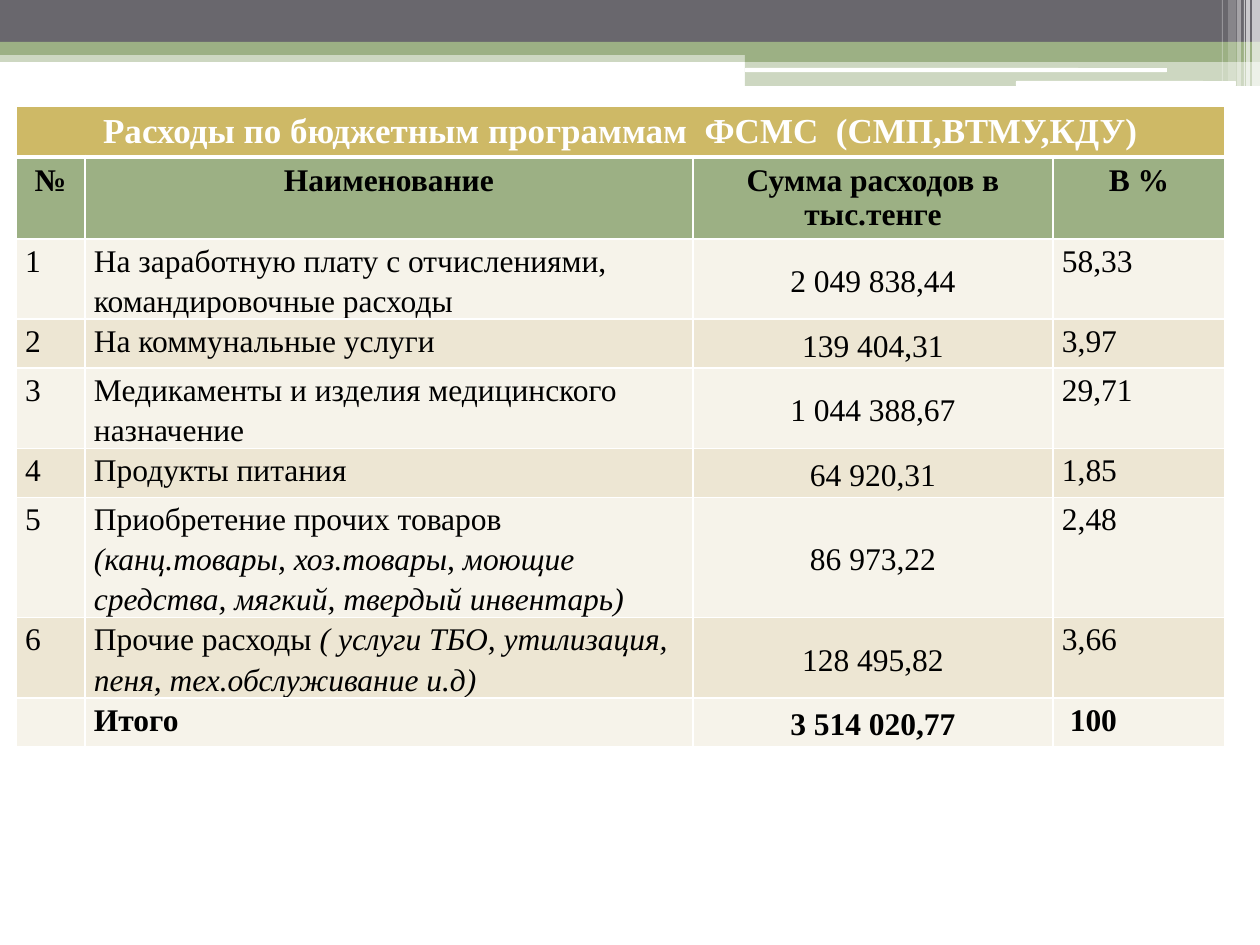
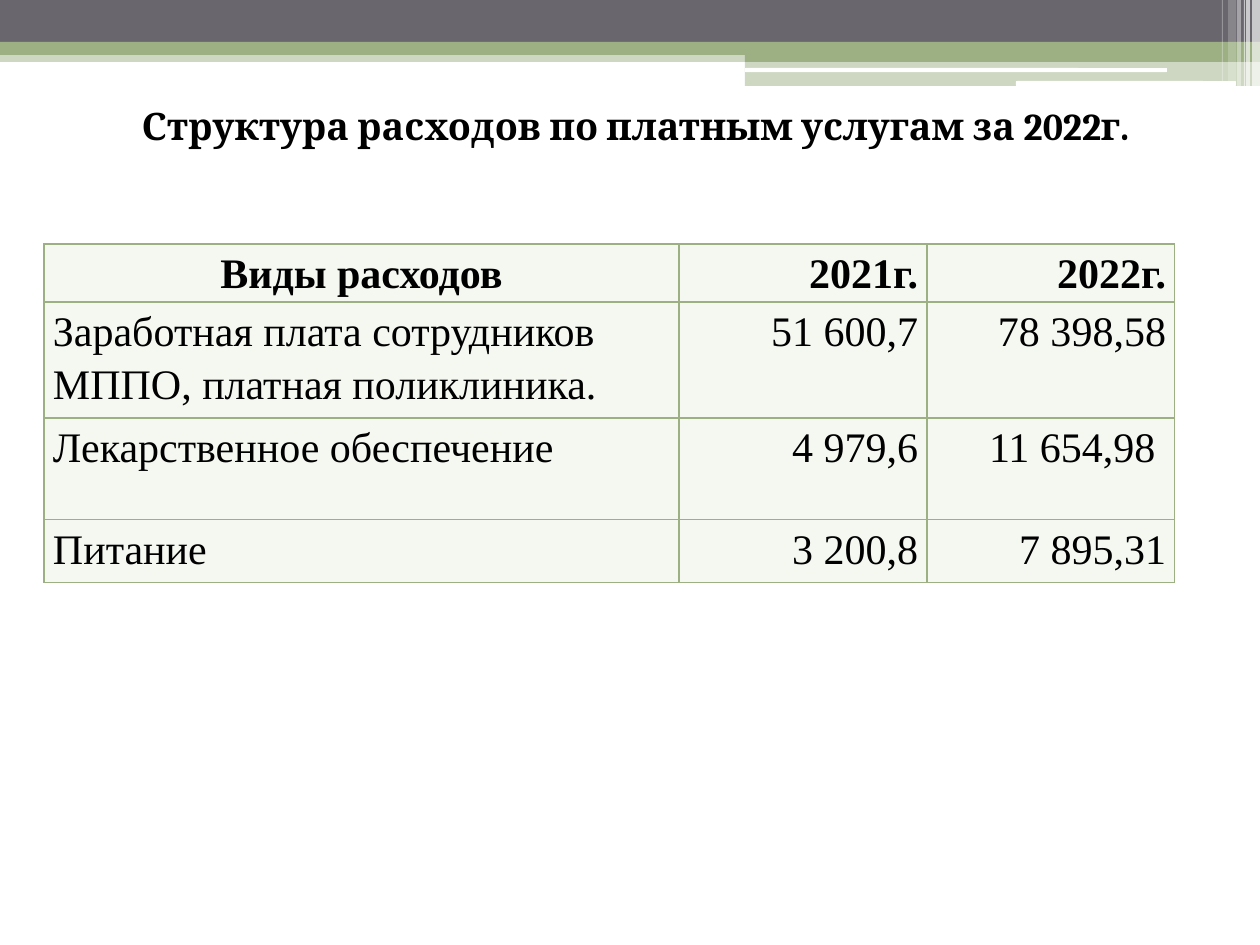
from lxml import etree
from pptx import Presentation
from pptx import util as u
from pptx.dml.color import RGBColor
from pptx.enum import shapes, text
from pptx.oxml.ns import qn

PX = 914400 / 126  # EMU per px
WIDTH, HEIGHT = 1260, 945

WHITE = RGBColor(0xFF, 0xFF, 0xFF)
BLACK = RGBColor(0, 0, 0)
GREY = RGBColor(0x69, 0x67, 0x6D)
GREEN = RGBColor(0x9C, 0xB0, 0x84)
GOLD = RGBColor(0xCE, 0xB9, 0x66)
CREAM = RGBColor(0xF6, 0xF3, 0xEA)
SAND = RGBColor(0xED, 0xE6, 0xD3)
MINT = RGBColor(0xF4, 0xF8, 0xF1)

BODY_FONT, TITLE_FONT = "Times New Roman", "Cambria"
LEFT, CENTER, RIGHT = text.PP_ALIGN.LEFT, text.PP_ALIGN.CENTER, text.PP_ALIGN.RIGHT
RECT = shapes.MSO_SHAPE.RECTANGLE
ROUNDED = shapes.MSO_SHAPE.ROUNDED_RECTANGLE


def px(length):
    return u.Emu(round(length * PX))


class Builder:
    def __init__(self):
        self.deck = Presentation()
        self.deck.slide_width, self.deck.slide_height = px(WIDTH), px(HEIGHT)
        self.page = None

    def new_page(self):
        self.page = self.deck.slides.add_slide(self.deck.slide_layouts[6])
        self.header_bands()

    def bar(self, left, top, width, height, color, opacity=100, kind=RECT):
        box = self.page.shapes.add_shape(kind, px(left), px(top), px(width), px(height))
        box.shadow.inherit = False
        box.fill.solid()
        box.fill.fore_color.rgb = color
        box.line.fill.background()
        if opacity < 100:
            tint = box.fill._xPr.find(".//" + qn("a:srgbClr"))
            etree.SubElement(tint, qn("a:alpha"), val=str(opacity * 1000))

    def header_bands(self):
        # Full-width bands and the stepped right part
        self.bar(0, 50, WIDTH, 12, GREEN, 50)
        self.bar(0, 0, WIDTH, 43, GREY)
        self.bar(0, 42, WIDTH, 13, GREEN)
        self.bar(745, 49, 515, 13, GREEN)
        self.bar(745, 62, 515, 24, GREEN, 50)
        self.bar(745, 68, 422, 4, WHITE, kind=ROUNDED)
        self.bar(1016, 81, 220, 5, WHITE, kind=ROUNDED)
        # Translucent stripes at the right edge
        for left, width, height, opacity in (
            (1252, 8, 86, 65), (1246, 4, 86, 65), (1244, 1, 86, 60),
            (1237, 4, 86, 40), (1228, 8, 81, 20), (1222, 1, 81, 30),
        ):
            self.bar(left, 0, width, height, WHITE, opacity)

    def style(self, para, size, color=BLACK, bold=False, align=LEFT, font=BODY_FONT):
        para.alignment = align
        para.font.name, para.font.size = font, u.Pt(size)
        para.font.bold, para.font.color.rgb = bold, color

    def title(self, left, top, width, height, words):
        box = self.page.shapes.add_textbox(px(left), px(top), px(width), px(height))
        frame = box.text_frame
        frame.word_wrap = True
        frame.vertical_anchor = text.MSO_ANCHOR.MIDDLE
        frame.text = words
        self.style(frame.paragraphs[0], 21.6, bold=True, align=CENTER, font=TITLE_FONT)

    def table(self, left, top, widths, heights, border, weight):
        frame = self.page.shapes.add_table(
            len(heights), len(widths), px(left), px(top), px(sum(widths)), px(sum(heights)))
        table = frame.table
        table.first_row = table.horz_banding = False
        for column, width in zip(table.columns, widths):
            column.width = px(width)
        for row, height in zip(table.rows, heights):
            row.height = px(height)
        for cell in table.iter_cells():
            for side in "LRTB":
                self.border(cell, side, border, weight)
        return table

    def border(self, cell, side, color, weight):
        props = cell._tc.get_or_add_tcPr()
        line = props.find(qn("a:ln" + side))
        if line is None:
            line = etree.SubElement(props, qn("a:ln" + side))
            fill = etree.SubElement(line, qn("a:solidFill"))
            etree.SubElement(fill, qn("a:srgbClr"), val=str(color))
        line.set("w", str(u.Pt(weight)))

    def cell(self, cell, words, fill, size, spacing=1.15, inset=0, middle=False, **look):
        """Words are a string, or a (plain, italic) pair."""
        cell.fill.solid()
        cell.fill.fore_color.rgb = fill
        cell.margin_left = cell.margin_right = px(9)
        cell.margin_top = cell.margin_bottom = px(inset)
        if middle:
            cell.vertical_anchor = text.MSO_ANCHOR.MIDDLE
        para = cell.text_frame.paragraphs[0]
        para.line_spacing = spacing
        self.style(para, size, **look)
        plain, italic = (words, "") if isinstance(words, str) else words
        if plain:
            para.add_run().text = plain.rstrip("\n")
        if plain.endswith("\n"):
            para.add_line_break()
        if italic:
            span = para.add_run()
            span.text = italic
            span.font.italic = True


def budget_page(show):
    show.new_page()
    rows = [
        ("1", "На заработную плату с отчислениями, командировочные расходы",
         "2 049 838,44", "58,33"),
        ("2", "На коммунальные услуги", "139 404,31", "3,97"),
        ("3", "Медикаменты и изделия медицинского назначение", "1 044 388,67", "29,71"),
        ("4", "Продукты питания", "64 920,31", "1,85"),
        ("5", ("Приобретение прочих товаров\n",
               "(канц.товары, хоз.товары, моющие средства, мягкий, твердый инвентарь)"),
         "86 973,22", "2,48"),
        ("6", ("Прочие расходы ", "( услуги ТБО, утилизация, пеня, тех.обслуживание и.д)"),
         "128 495,82", "3,66"),
        ("", "Итого", "3 514 020,77", " 100"),
    ]
    table = show.table(16, 106, [69, 608, 360, 172],
                       [51, 82, 80, 49, 80, 49, 120, 80, 49], WHITE, 1)
    # Heading across all columns, with a thick rule below
    for column in range(4):
        show.border(table.cell(0, column), "B", WHITE, 3)
        show.border(table.cell(1, column), "T", WHITE, 3)
    table.cell(0, 0).merge(table.cell(0, 3))
    show.cell(table.cell(0, 0), "Расходы по бюджетным программам  ФСМС  (СМП,ВТМУ,КДУ)",
              GOLD, 20, 1, 6, color=WHITE, bold=True, align=CENTER)
    # Column heads
    for column, words in enumerate(("№", "Наименование", "Сумма расходов в тыс.тенге", "В %")):
        show.cell(table.cell(1, column), words, GREEN, 18, 1, 6, bold=True, align=CENTER)
    # Banded body, total in bold
    for index, row in enumerate(rows):
        for column, words in enumerate(row):
            is_sum = column == 2
            show.cell(table.cell(index + 2, column), words, SAND if index % 2 else CREAM, 18,
                      middle=is_sum, align=CENTER if is_sum else LEFT, bold=row is rows[-1])


def paid_services_page(show):
    show.new_page()
    show.title(74, 96, 1123, 58, "Структура расходов по платным услугам за 2022г.")
    rows = [
        ("Виды расходов", "2021г.", "2022г."),
        ("Заработная плата сотрудников МППО, платная поликлиника.", "51 600,7", "78 398,58"),
        ("Лекарственное обеспечение", "4 979,6", "11 654,98 "),
        ("Питание", "3 200,8", "7 895,31"),
    ]
    table = show.table(44, 244, [635, 248, 248], [53, 107, 102, 63], GREEN, 0.75)
    for index, row in enumerate(rows):
        for column, words in enumerate(row):
            first = CENTER if index == 0 else LEFT
            show.cell(table.cell(index, column), words, MINT, 24,
                      align=RIGHT if column else first, bold=index == 0)


def main():
    show = Builder()
    budget_page(show)
    paid_services_page(show)
    show.deck.save("out.pptx")


if __name__ == "__main__":
    main()
